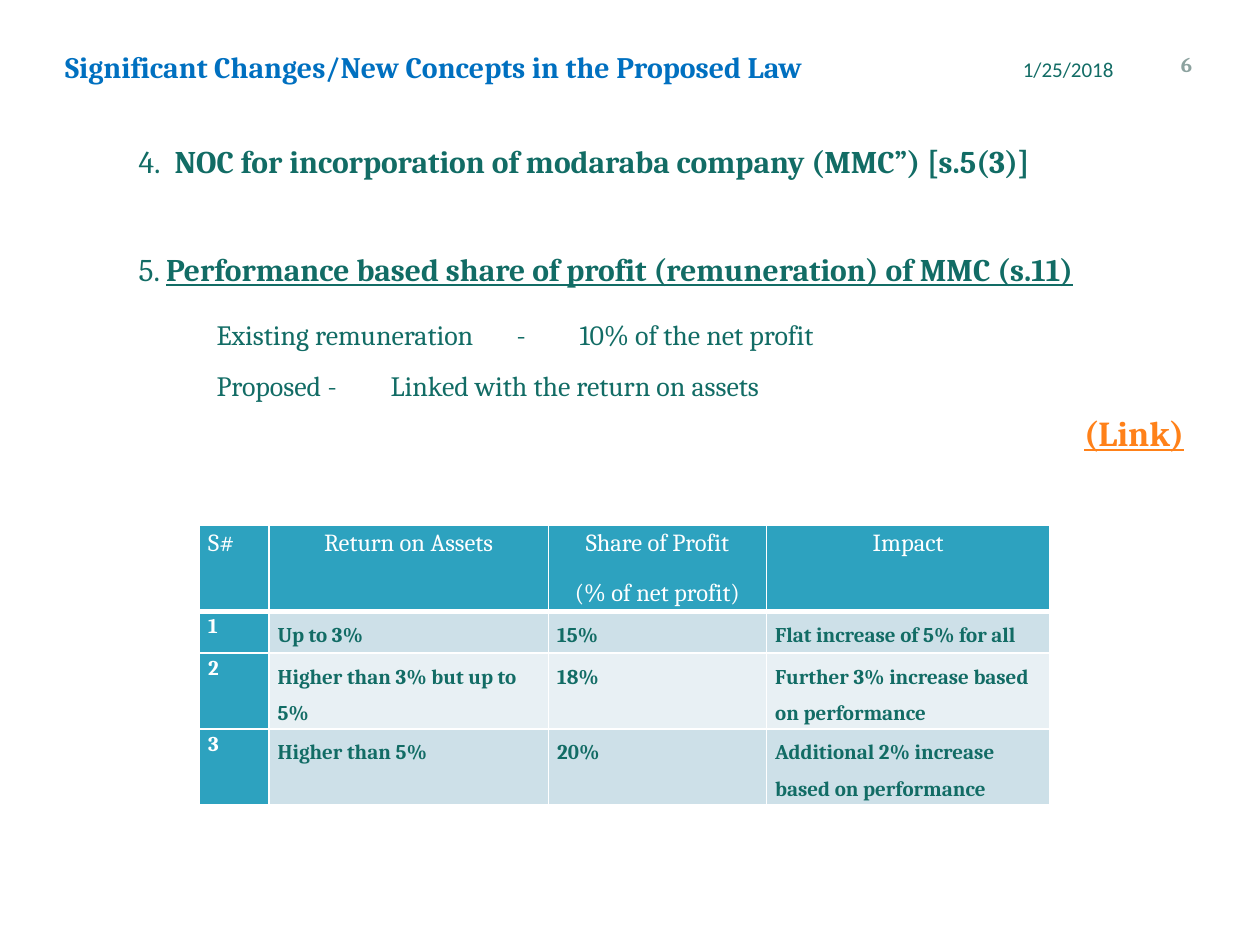
import pptx
import pptx.dml.color
import pptx.enum.text
import pptx.oxml.ns
import pptx.util
from dataclasses import dataclass
from lxml import etree

Pt = pptx.util.Pt
Align = pptx.enum.text.PP_ALIGN
Anchor = pptx.enum.text.MSO_ANCHOR
qn = pptx.oxml.ns.qn


@dataclass(frozen=True)
class Theme:
    serif: str = "Cambria"
    sans: str = "Calibri"
    title: str = "0070C0"
    ink: str = "126C65"
    muted: str = "8CA29F"
    link: str = "FF8119"
    white: str = "FFFFFF"
    header: str = "2DA2BF"
    bands: tuple = ("CDE0E8", "E8F0F4")
    title_size: float = 17
    heading_size: float = 18
    detail_size: float = 16
    link_size: float = 20
    header_size: float = 14
    small_size: float = 12


THEME = Theme()

HEADINGS = {
    "noc": ("4.\t", "NOC for incorporation of modaraba company (MMC”) [s.5(3)]"),
    "share": ("5. ", "Performance based share of profit (remuneration) of MMC (s.11)"),
}
DETAILS = [
    # text, space before, tab stops
    ("Existing remuneration\t-\t10% of the net profit", 17, (223, 312)),
    ("Proposed\t-\tLinked with the return on assets", 9.6, (244, 298.5)),
]
COLUMNS = (39.6, 159.84, 124.56, 162)
ROWS = (49, 24, 30, 30)
CELLS = [
    ("S#", "Return on Assets", "Share of Profit\n(% of net profit)", "Impact"),
    ("1", "Up to 3%", "15%", "Flat increase of 5% for all"),
    ("2", "Higher than 3% but up to 5%", "18%", "Further 3% increase based on performance"),
    ("3", "Higher than 5%", "20%", "Additional 2% increase based on performance"),
]


def apply(target, values):
    for name, value in values.items():
        setattr(target, name, value)


def add_span(para, text, color, **font):
    span = para.add_run()
    span.text = text
    apply(span.font, {"name": THEME.serif, "bold": False, **font})
    span.font.color.rgb = pptx.dml.color.RGBColor.from_string(color)


def place(shape, box):
    apply(shape, dict(zip(("left", "top", "width", "height"), map(Pt, box))))


def add_title(page, box):
    title = page.shapes.title
    place(title, box)
    apply(title.text_frame, {"vertical_anchor": Anchor.MIDDLE, "word_wrap": True,
                             "auto_size": pptx.enum.text.MSO_AUTO_SIZE.NONE})
    para = title.text_frame.paragraphs[0]
    para.alignment = Align.LEFT
    add_span(para, "Significant Changes/New Concepts in the Proposed Law",
             THEME.title, size=Pt(THEME.title_size), bold=True)


def add_label(page, box, text, color, align, **font):
    frame = page.shapes.add_textbox(*map(Pt, box)).text_frame
    apply(frame, {"word_wrap": True, "vertical_anchor": Anchor.MIDDLE})
    para = frame.paragraphs[0]
    para.alignment = align
    add_span(para, text, color, size=Pt(THEME.small_size), **font)


def format_list_item(para, margin=0, indent=0, before=0, tabs=(), align=Align.LEFT):
    """Replace the template's bullet and indents by those of this item."""
    properties = para._p.get_or_add_pPr()
    properties.set("marL", str(Pt(margin)))
    properties.set("indent", str(Pt(indent)))
    etree.SubElement(properties, qn("a:buNone"))
    if tabs:
        stops = etree.SubElement(properties, qn("a:tabLst"))
        for stop in tabs:
            etree.SubElement(stops, qn("a:tab"), pos=str(Pt(stop)), algn="l")
    apply(para, {"alignment": align, "space_before": Pt(before), "space_after": Pt(0)})


def add_list(page, box):
    body = page.placeholders[1]
    place(body, box)
    frame = body.text_frame
    apply(frame, {"word_wrap": True, "vertical_anchor": Anchor.TOP,
                  "auto_size": pptx.enum.text.MSO_AUTO_SIZE.NONE})

    def add_heading(para, key, before, underline):
        format_list_item(para, 20.6, -20.6, before)
        number, text = HEADINGS[key]
        size = Pt(THEME.heading_size)
        add_span(para, number, THEME.ink, size=size)
        add_span(para, text, THEME.ink, size=size, bold=True, underline=underline)

    add_heading(frame.paragraphs[0], "noc", 0, False)
    add_heading(frame.add_paragraph(), "share", 40, True)
    for text, before, tabs in DETAILS:
        para = frame.add_paragraph()
        format_list_item(para, indent=44.6, before=before, tabs=tabs)
        add_span(para, text, THEME.ink, size=Pt(THEME.detail_size))
    para = frame.add_paragraph()
    format_list_item(para, before=5.3, align=Align.RIGHT)
    add_span(para, "(Link)", THEME.link, size=Pt(THEME.link_size), bold=True, underline=True)


def add_borders(cell, bottom):
    properties = cell._tc.get_or_add_tcPr()
    widths = {"lnL": 1, "lnR": 1, "lnT": 1, "lnB": bottom}
    for index, (side, width) in enumerate(widths.items()):
        line = etree.Element(qn(f"a:{side}"), w=str(Pt(width)))
        fill = etree.SubElement(line, qn("a:solidFill"))
        etree.SubElement(fill, qn("a:srgbClr"), val=THEME.white)
        properties.insert(index, line)


def fill_cell(cell, text, row, column):
    is_header, is_number = row == 0, column == 0
    on_accent = is_header or is_number
    apply(cell, {"margin_left": Pt(5), "margin_right": Pt(5),
                 "margin_top": 0, "margin_bottom": 0})
    cell.fill.solid()
    fill = THEME.header if on_accent else THEME.bands[(row - 1) % 2]
    cell.fill.fore_color.rgb = pptx.dml.color.RGBColor.from_string(fill)
    add_borders(cell, 3 if is_header else 1)
    for index, line in enumerate(text.split("\n")):
        frame = cell.text_frame
        para = frame.add_paragraph() if index else frame.paragraphs[0]
        apply(para, {"alignment": Align.CENTER if is_header and not is_number else Align.LEFT,
                     "line_spacing": 1.15 if on_accent else 1.5,
                     "space_after": Pt(0 if is_number else 10)})
        add_span(para, line, THEME.white if on_accent else THEME.ink, bold=not is_header,
                 size=Pt(THEME.header_size if is_header else THEME.small_size))


def add_profit_table(page, left, top):
    table = page.shapes.add_table(len(ROWS), len(COLUMNS), Pt(left), Pt(top),
                                  Pt(sum(COLUMNS)), Pt(sum(ROWS))).table
    for column, width in zip(table.columns, COLUMNS):
        column.width = Pt(width)
    for row, height in zip(table.rows, ROWS):
        row.height = Pt(height)
    for row, texts in enumerate(CELLS):
        for column, text in enumerate(texts):
            fill_cell(table.cell(row, column), text, row, column)


def main():
    deck = pptx.Presentation()
    apply(deck, {"slide_width": Pt(720), "slide_height": Pt(540)})
    page = deck.slides.add_slide(deck.slide_layouts[1])
    add_label(page, (652.3, 22.3, 36, 28.8), "6", THEME.muted, Align.RIGHT, bold=True)
    add_label(page, (577.4, 25.2, 106.6, 28.8), "1/25/2018", THEME.ink, Align.LEFT,
              name=THEME.sans)
    add_list(page, (72, 77.8, 612, 220.3))
    add_profit_table(page, 114, 300.3)
    add_title(page, (30, 23.8, 516, 28))
    deck.save("out.pptx")


if __name__ == "__main__":
    main()
